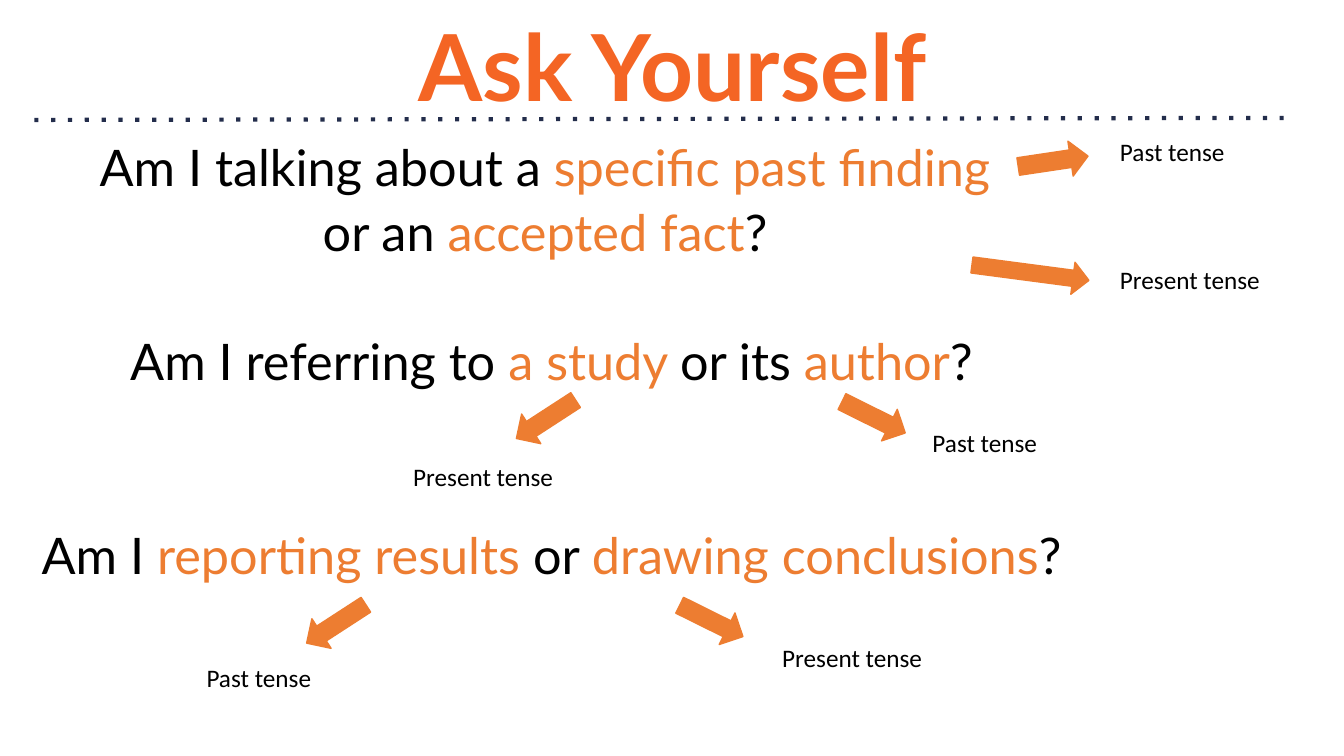
from lxml.etree import SubElement
from pptx import Presentation
from pptx.dml.color import RGBColor
from pptx.enum.shapes import MSO_CONNECTOR, MSO_SHAPE
from pptx.enum.text import MSO_ANCHOR, MSO_AUTO_SIZE, PP_ALIGN
from pptx.oxml.ns import qn
from pptx.util import Inches, Pt

ORANGE = "ED7D31"
BLACK = "000000"


def color(hex_string):
    return RGBColor.from_string(hex_string)


def add_text(paragraphs, box, size, font="Lato", bold=False, align=PP_ALIGN.LEFT,
             wrap=True, inset=0.1, line_spacing=None, space_after=0, indent=0):
    """Each paragraph is (space before in points, [(text, color), ...])."""
    shape = slide.shapes.add_textbox(*(Inches(length) for length in box))
    frame = shape.text_frame
    frame.word_wrap = wrap
    frame.auto_size = MSO_AUTO_SIZE.NONE if wrap else MSO_AUTO_SIZE.SHAPE_TO_FIT_TEXT
    frame.vertical_anchor = MSO_ANCHOR.TOP
    frame.margin_left = frame.margin_right = Inches(0.1)
    frame.margin_top = frame.margin_bottom = Inches(inset)
    for number, (space_before, runs) in enumerate(paragraphs):
        paragraph = frame.add_paragraph() if number else frame.paragraphs[0]
        paragraph.alignment = align
        paragraph.space_before = Pt(space_before)
        paragraph.space_after = Pt(space_after)
        if line_spacing:
            paragraph.line_spacing = line_spacing
        if indent:
            properties = paragraph._p.get_or_add_pPr()
            properties.set("marL", str(Inches(indent)))
            properties.set("indent", "0")
        for text, hex_string in runs:
            run = paragraph.add_run()
            run.text = text
            run.font.name = font
            run.font.size = Pt(size)
            run.font.bold = bold
            run.font.color.rgb = color(hex_string)


presentation = Presentation()
presentation.slide_width = Inches(13.33)
presentation.slide_height = Inches(7.5)
slide = presentation.slides.add_slide(presentation.slide_layouts[6])

# Dotted rule under the title
rule = slide.shapes.add_connector(MSO_CONNECTOR.STRAIGHT, Inches(0.34), Inches(1.19),
                                  Inches(12.73), Inches(1.17))
rule.line.color.rgb = color("232D4B")
rule.line.width = Pt(3)
SubElement(rule.line._ln, qn("a:prstDash")).set("val", "dot")
SubElement(rule._element.spPr, qn("a:effectLst"))

# Title
add_text([(0, [("Ask Yourself", "F46524")])], (0.61, 0.12, 12.12, 0.93), 66,
         bold=True, align=PP_ALIGN.CENTER, line_spacing=0.9)

# Questions, set apart by whole lines
LINE_PITCH = 46.2
questions = [
    (0, [("Am I talking about a ", BLACK), ("specific past finding ", ORANGE)]),
    (0, [("or an ", BLACK), ("accepted fact", ORANGE), ("? ", BLACK)]),
    (LINE_PITCH, [("Am I referring to ", BLACK), ("a study ", ORANGE),
                  ("or its ", BLACK), ("author", ORANGE), ("?", BLACK)]),
    (2 * LINE_PITCH, [("Am I ", BLACK), ("reporting results", ORANGE), (" or ", BLACK),
                      ("drawing conclusions", ORANGE), ("?", BLACK)]),
]
add_text(questions, (0, 1.25, 10.83, 6.16), 36, align=PP_ALIGN.CENTER,
         space_after=3, indent=0.11)

# Arrows from the questions to the answers
arrows = [
    (5.24, 3.81, 0.35, 0.7, 57),
    (8.49, 3.79, 0.35, 0.7, 296.4),
    (10.27, 1.25, 0.35, 0.7, 261.5),
    (10.06, 2.12, 0.32, 1.17, 277.5),
    (3.16, 5.84, 0.35, 0.7, 57),
    (6.88, 5.81, 0.35, 0.7, 296.4),
]
for *box, rotation in arrows:
    arrow = slide.shapes.add_shape(MSO_SHAPE.DOWN_ARROW, *(Inches(length) for length in box))
    arrow.rotation = rotation
    arrow.shadow.inherit = False
    arrow.fill.solid()
    arrow.fill.fore_color.rgb = color(ORANGE)
    arrow.line.color.rgb = color(ORANGE)
    arrow.line.width = Pt(1)

# Answers
answers = {
    "Past tense": (1.25, [(11.01, 1.3), (9.15, 4.19), (1.95, 6.52)]),
    "Present tense": (1.6, [(11.01, 2.57), (4, 4.53), (7.66, 6.32)]),
}
for answer, (width, places) in answers.items():
    for left, top in places:
        add_text([(0, [(answer, BLACK)])], (left, top, width, 0.4), 18,
                 font="Calibri", wrap=False, inset=0.05)

presentation.save("out.pptx")
